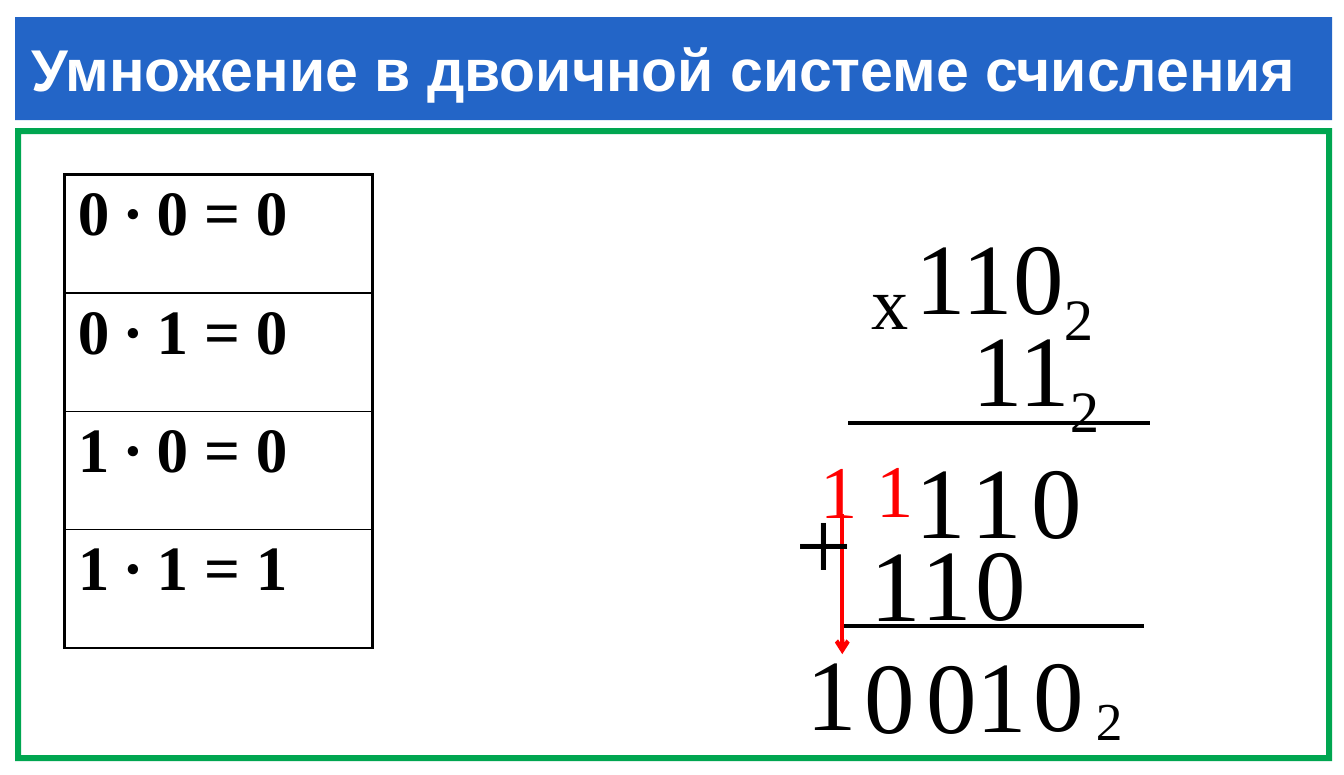
from lxml import etree
from pptx import Presentation
from pptx.dml.color import RGBColor
from pptx.enum.shapes import MSO_CONNECTOR, MSO_SHAPE
from pptx.enum.text import MSO_AUTO_SIZE, PP_ALIGN
from pptx.oxml.ns import qn
from pptx.util import Inches, Pt

STRAIGHT = MSO_CONNECTOR.STRAIGHT
RECTANGLE, FRAME = MSO_SHAPE.RECTANGLE, MSO_SHAPE.FRAME
FIT_TEXT = MSO_AUTO_SIZE.SHAPE_TO_FIT_TEXT
CENTER = PP_ALIGN.CENTER
SERIF = "Times New Roman"
BLACK, WHITE, RED, BLUE, GREEN = "000000", "FFFFFF", "FF0000", "2365C7", "00A650"


def rgb(value):
    return RGBColor.from_string(value)


def add_text(box, text, size, color=BLACK, font=SERIF, bold=False, margins=(0.12, 0.06), index=""):
    """Add a text box; index is set as a subscript after the text."""
    tf = s.shapes.add_textbox(*map(Inches, box)).text_frame
    tf.word_wrap = True
    tf.auto_size = FIT_TEXT
    tf.margin_left = tf.margin_right = Inches(margins[0])
    tf.margin_top = tf.margin_bottom = Inches(margins[1])
    p = tf.paragraphs[0]
    for part in filter(None, (text, index)):
        r = p.add_run()
        r.text = part
        for name, value in {"name": font, "size": Pt(size), "bold": bold}.items():
            setattr(r.font, name, value)
        r.font.color.rgb = rgb(color)
    if index:
        r.font._element.set("baseline", "-25000")
    return p


prs = Presentation()
prs.slide_width = Inches(13.3073)
prs.slide_height = Inches(7.6771)
s = prs.slides.add_slide(prs.slide_layouts[6])

# Green frame and blue title band
for kind, top, height, color in ((FRAME, 1.27, 6.27, GREEN), (RECTANGLE, 0.17, 1.02, BLUE)):
    sp = s.shapes.add_shape(kind, Inches(0.15), Inches(top), Inches(13.04), Inches(height))
    sp.shadow.inherit = False
    sp.fill.solid()
    sp.fill.fore_color.rgb = rgb(color)
    sp.line.fill.background()
    if kind == FRAME:
        sp.adjustments[0] = 0.06 / height

# Multiplication table
products = ["0 ∙ 0 = 0", "0 ∙ 1 = 0", "1 ∙ 0 = 0", "1 ∙ 1 = 1"]
last = len(products) - 1
table = s.shapes.add_table(len(products), 1, Inches(0.64), Inches(1.73), Inches(3.05), Inches(4.69)).table
table.first_row = table.horz_banding = False
for i, product in enumerate(products):
    cell = table.cell(i, 0)
    cell.margin_left = cell.margin_right = Inches(0.13)
    cell.margin_top = cell.margin_bottom = Inches(0.05)
    r = cell.text_frame.paragraphs[0].add_run()
    r.text = product
    for name, value in {"name": SERIF, "size": Pt(45), "bold": True}.items():
        setattr(r.font, name, value)
    r.font.color.rgb = rgb(BLACK)
    widths = {"L": 2.25, "R": 2.25, "T": 2.25 if i == 0 else 1, "B": 2.25 if i == last else 1}
    tcPr = cell._tc.get_or_add_tcPr()
    for side, width in widths.items():
        ln = etree.SubElement(tcPr, qn(f"a:ln{side}"), w=str(Pt(width)))
        fill = etree.SubElement(ln, qn("a:solidFill"))
        etree.SubElement(fill, qn("a:srgbClr"), val=BLACK)
    cell.fill.background()

# Factors
add_text((8.95, 2.06, 3.14, 1.33), "110", 72, index="2")
add_text((8.51, 2.47, 0.78, 1.01), "х", 53)
add_text((9.51, 2.97, 2.44, 1.33), "11", 72, index="2")

# Rules under the factors and the sum, and the carry arrow
for x1, y1, x2, y2, color in (
    (8.4, 4.19, 11.39, 4.19, BLACK),
    (8.34, 6.2, 11.33, 6.2, BLACK),
    (8.34, 5.09, 8.34, 6.48, RED),
):
    line = s.shapes.add_connector(STRAIGHT, Inches(x1), Inches(y1), Inches(x2), Inches(y2))
    line.line.width = Pt(3)
    line.line.color.rgb = rgb(color)
    etree.SubElement(line._element.spPr, qn("a:effectLst"))
    if color == RED:
        etree.SubElement(line.line._get_or_add_ln(), qn("a:tailEnd"), type="arrow")

# Partial products, plus sign and result: one box per digit
for digit, left, top, width in (
    ("1", 8.95, 4.27, 0.67), ("1", 9.5, 4.27, 0.67), ("0", 10.09, 4.27, 0.67),
    ("1", 8.5, 5.1, 0.98), ("1", 9, 5.09, 0.98), ("0", 9.54, 5.09, 0.98),
    ("+", 7.76, 4.69, 0.78),
    ("1", 7.87, 6.18, 0.98), ("0", 8.44, 6.21, 0.98), ("0", 9.05, 6.21, 0.98),
    ("1", 9.55, 6.2, 0.98), ("0", 10.11, 6.19, 0.98),
):
    add_text((left, top, width, 1.33), digit, 72)
add_text((10.73, 6.75, 0.67, 0.76), "2", 38)

# Carries
for left, top in ((8, 4.34), (8.56, 4.33)):
    add_text((left, top, 0.67, 1.01), "1", 53, RED)

title = add_text((0, 0.32, 13.31, 1.23), "Умножение в двоичной системе счисления ", 42,
                 WHITE, "Arial", True, (0, 0))
title.alignment = CENTER

prs.save("out.pptx")
